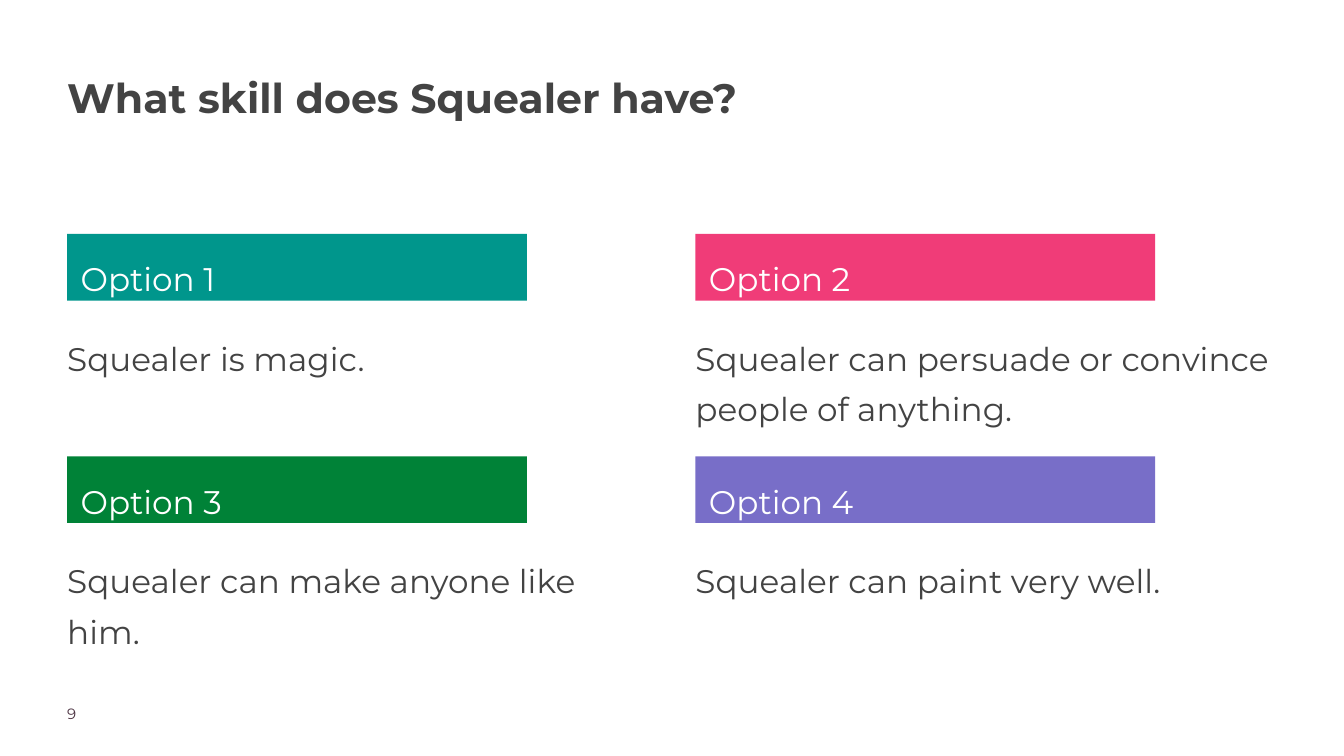
import pptx
import pptx.util
import pptx.dml.color
import pptx.enum.shapes
import pptx.enum.text

W, H = 20, 11.25
LEFT, TOP = 1, 3.48
COL, ROW = 9.35, 3.31
FONT = "Montserrat"
DARK = "434343"

OPTIONS = [
    ("Option 1", "Squealer is magic.", "00968C"),
    ("Option 2", "Squealer can persuade or convince people of anything.", "F03C78"),
    ("Option 3", "Squealer can make anyone like him.", "008237"),
    ("Option 4", "Squealer can paint very well.", "786EC8"),
]


def rgb(value):
    return pptx.dml.color.RGBColor.from_string(value)


def inches(*values):
    return [pptx.util.Inches(v) for v in values]


def write(sp, text, size, color, bold=False, spacing=1.0, after=0, inset=0):
    tf = sp.text_frame
    tf.word_wrap = True
    tf.vertical_anchor = pptx.enum.text.MSO_ANCHOR.TOP
    tf.margin_left, tf.margin_top, tf.margin_right, tf.margin_bottom = inches(*[inset] * 4)
    p = tf.paragraphs[0]
    p.alignment = pptx.enum.text.PP_ALIGN.LEFT
    p.line_spacing = spacing
    p.space_after = pptx.util.Pt(after)
    r = p.add_run()
    r.text = text
    r.font.name = FONT
    r.font.size = pptx.util.Pt(size)
    r.font.bold = bold
    r.font.color.rgb = rgb(color)


def add_text(s, box, text, size, color, **style):
    write(s.shapes.add_textbox(*inches(*box)), text, size, color, **style)


def add_option(s, box, label, answer, color):
    x, y, w, h = box
    sp = s.shapes.add_shape(pptx.enum.shapes.MSO_SHAPE.RECTANGLE,
                            *inches(x, y, w * 0.7315, h * 0.3))
    sp.shadow.inherit = False
    sp.fill.solid()
    sp.fill.fore_color.rgb = rgb(color)
    sp.line.fill.background()
    write(sp, label, 35, "FFFFFF", spacing=1.3, inset=0.2)
    add_text(s, (x, y + h * 0.417, w * 0.924, h * 0.417), answer, 35, DARK,
             spacing=1.3, after=20)


def add_options(s):
    for i, (label, answer, color) in enumerate(OPTIONS):
        row, col = divmod(i, 2)
        add_option(s, (LEFT + col * COL, TOP + row * ROW, COL, ROW), label, answer, color)


def main():
    prs = pptx.Presentation()
    prs.slide_width, prs.slide_height = inches(W, H)
    s = prs.slides.add_slide(prs.slide_layouts[6])
    s.background.fill.solid()
    s.background.fill.fore_color.rgb = rgb("FFFFFF")
    add_options(s)
    add_text(s, (LEFT, 10.48, 1.57, 0.39), "9", 16, "4B3241")
    add_text(s, (LEFT, 0.97, 14.44, 1.78), "What skill does Squealer have?", 44, DARK,
             bold=True, spacing=1.15)
    prs.save("out.pptx")


if __name__ == "__main__":
    main()
